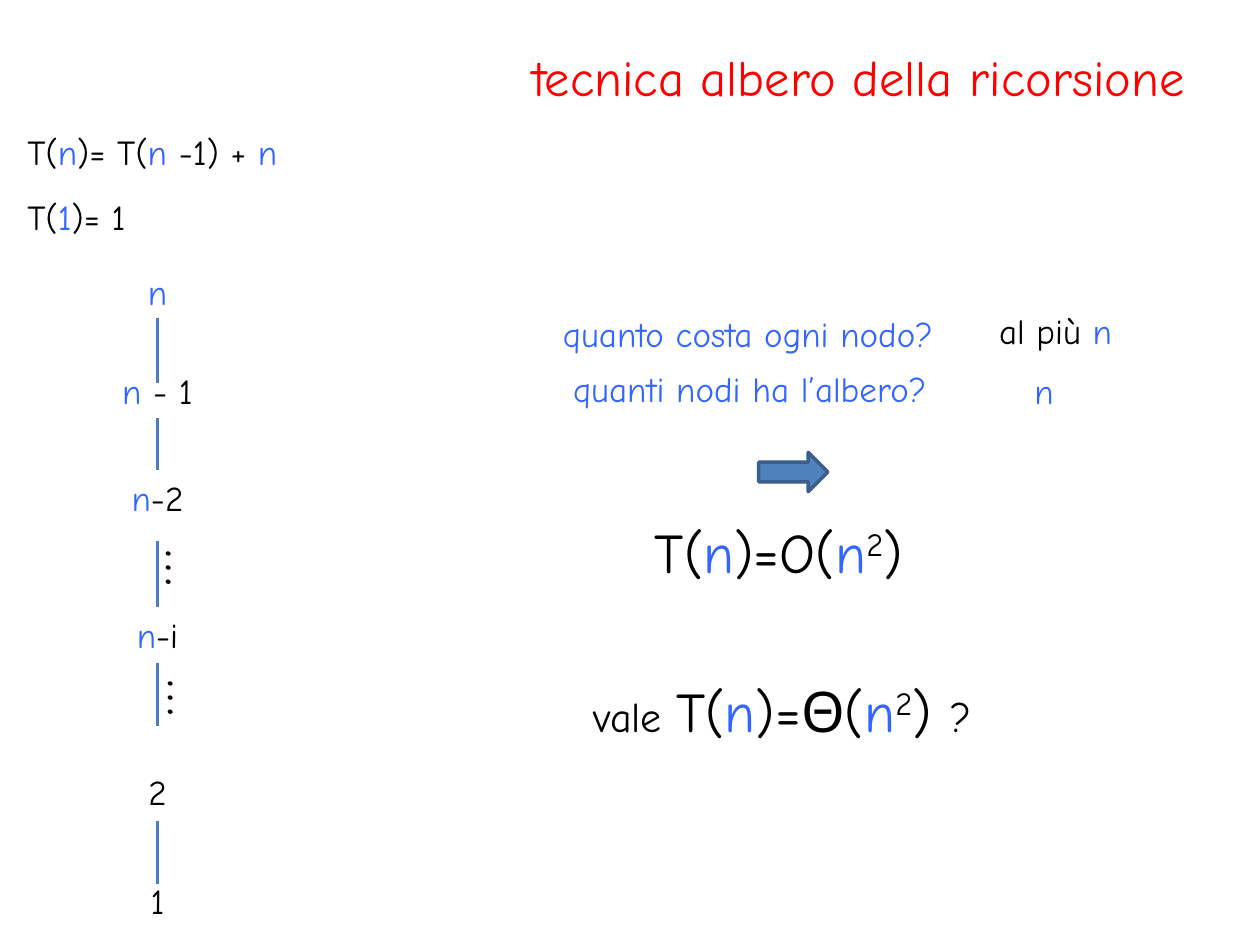
from lxml import etree
from pptx import Presentation
from pptx.dml.color import RGBColor
from pptx.enum import shapes, text
from pptx.oxml import ns
from pptx.util import Pt

FONT = "Comic Neue"
BLACK = RGBColor(0x00, 0x00, 0x00)
BLUE = RGBColor(0x33, 0x66, 0xFF)
RED = RGBColor(0xFF, 0x00, 0x00)
EDGE_BLUE = RGBColor(0x4B, 0x7E, 0xBC)
ARROW_FILL = RGBColor(0x4F, 0x81, 0xBD)
ARROW_LINE = RGBColor(0x3A, 0x5F, 0x8C)

TREE_AXIS = 90
N = ("n", BLUE)
SQUARED = ("2", BLACK, None, True)


def box(left, top, width, height):
    return Pt(left), Pt(top), Pt(width), Pt(height)


def add_run(paragraph, content, color=BLACK, size=None, superscript=False):
    run = paragraph.add_run()
    run.text = content
    run.font.color.rgb = color
    if size:
        run.font.size = Pt(size)
    if superscript:
        run.font._element.set("baseline", "30000")


def add_text(slide, left, top, width, height, runs, size=20,
             align=text.PP_ALIGN.LEFT):
    shape = slide.shapes.add_textbox(*box(left, top, width, height))
    shape.text_frame.word_wrap = True
    paragraph = shape.text_frame.paragraphs[0]
    paragraph.alignment = align
    paragraph.font.name = FONT
    paragraph.font.size = Pt(size)
    for run in runs:
        add_run(paragraph, *run)
        paragraph.runs[-1].font.name = FONT
        if paragraph.runs[-1].font.size is None:
            paragraph.runs[-1].font.size = Pt(size)
    return shape


def add_title(slide, content):
    title = slide.shapes.title
    title.left, title.top, title.width, title.height = box(36, 21.6, 648, 44)
    title.text_frame.text = content
    title.text_frame.vertical_anchor = text.MSO_ANCHOR.MIDDLE
    paragraph = title.text_frame.paragraphs[0]
    paragraph.alignment = text.PP_ALIGN.RIGHT
    paragraph.font.name = FONT
    paragraph.font.size = Pt(28.8)
    paragraph.font.color.rgb = RED


def add_node(slide, top, runs):
    width = 84
    add_text(slide, TREE_AXIS - width / 2, top, width, 32, runs,
             align=text.PP_ALIGN.CENTER)


def add_edge(slide, top, bottom):
    edge = slide.shapes.add_connector(
        shapes.MSO_CONNECTOR.STRAIGHT,
        Pt(TREE_AXIS), Pt(bottom), Pt(TREE_AXIS), Pt(top))
    edge.line.color.rgb = EDGE_BLUE
    edge.line.width = Pt(1.5)
    etree.SubElement(edge._element.spPr, ns.qn("a:effectLst"))


def add_arrow(slide):
    arrow = slide.shapes.add_shape(
        shapes.MSO_SHAPE.RIGHT_ARROW, *box(433.5, 258.5, 39.6, 22.5))
    arrow.shadow.inherit = False
    arrow.fill.solid()
    arrow.fill.fore_color.rgb = ARROW_FILL
    arrow.line.color.rgb = ARROW_LINE
    arrow.line.width = Pt(2)


def add_tree(slide):
    for top, bottom in [(182, 219), (239, 268.5), (309, 347),
                        (379, 415), (469, 505)]:
        add_edge(slide, top, bottom)
    for top, runs in [
        (151, [N]),
        (207.4, [("n ", BLUE), ("- 1",)]),
        (268.5, [N, ("-2",)]),
        (347, [N, ("-i",)]),
        (437, [("2",)]),
        (499, [("1",)]),
    ]:
        add_node(slide, top, runs)
    for left, top in [(93.6, 298), (95, 372.2)]:
        dots = add_text(slide, left, top, 28, 46, [("…",)], size=32)
        dots.rotation = 90


def main():
    presentation = Presentation()
    presentation.slide_width, presentation.slide_height = Pt(720), Pt(540)
    slide = presentation.slides.add_slide(presentation.slide_layouts[5])

    add_title(slide, "tecnica albero della ricorsione")
    add_text(slide, 8.6, 71.3, 241, 32,
             [("T(",), N, (")= T(",), N, (" -1) + ",), N])
    add_text(slide, 8.6, 108, 91, 32, [("T(",), ("1", BLUE), (")= 1",)])
    add_tree(slide)

    add_text(slide, 314.6, 175, 306, 32, [("quanto costa ogni nodo?", BLUE)])
    add_text(slide, 563.8, 173.5, 91, 32, [("al più ",), N])
    add_text(slide, 320.4, 206.6, 278, 32,
             [("quanti nodi ha l’albero?", BLUE)])
    add_text(slide, 584, 207.4, 42, 32, [N])

    add_arrow(slide)
    add_text(slide, 367.2, 292.3, 180, 46,
             [("T(",), N, (")=O(",), N, SQUARED, (")",)], size=32)
    add_text(slide, 332, 383, 294.5, 46,
             [("vale ", BLACK, 24), ("T(",), N, (")=Θ(",), N, SQUARED,
              (") ",), ("?", BLACK, 24)], size=32)
    presentation.save("out.pptx")


if __name__ == "__main__":
    main()
